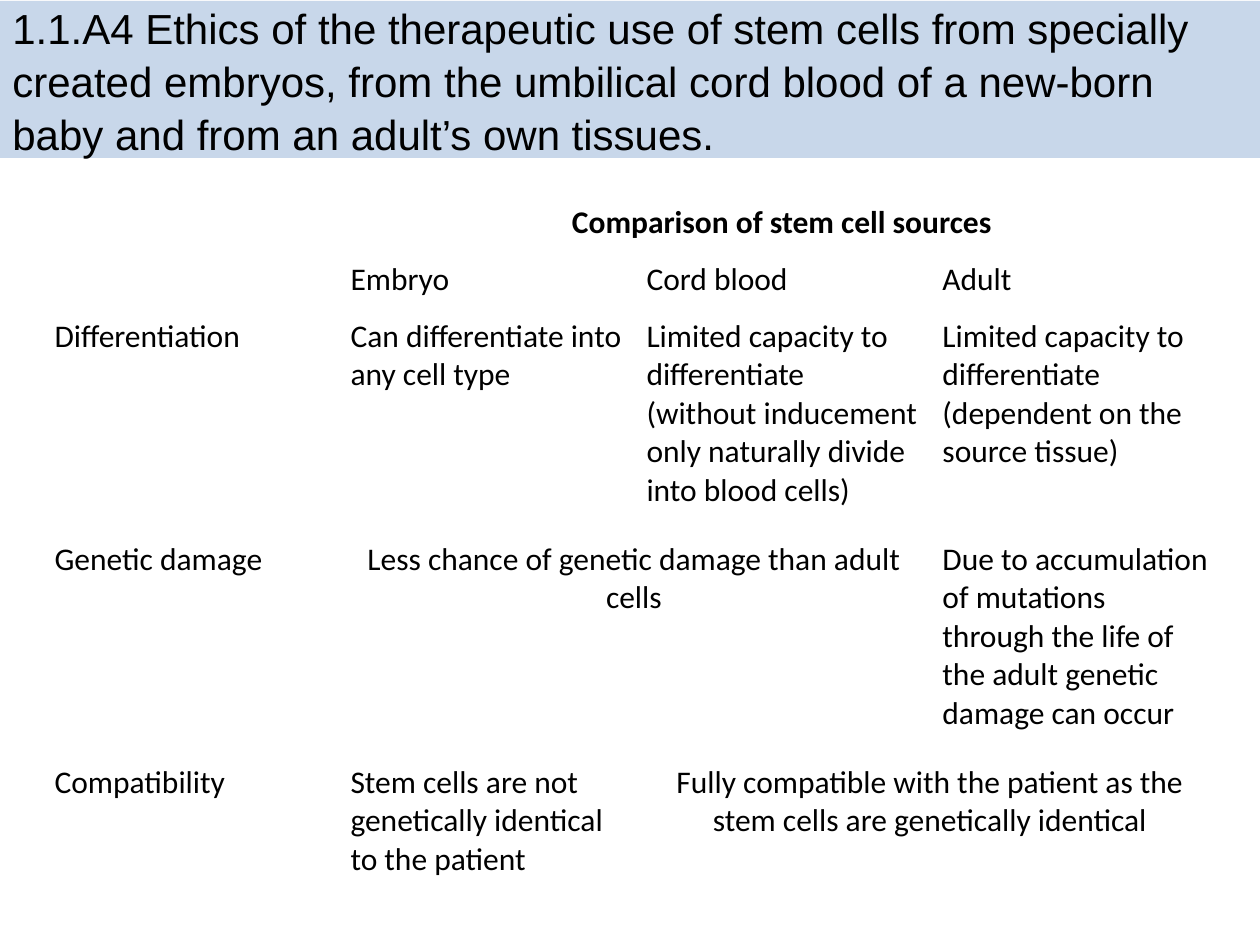
from dataclasses import dataclass

import pptx
import pptx.dml.color
import pptx.enum.shapes
import pptx.enum.text
import pptx.oxml
import pptx.oxml.ns
import pptx.util

EMU_PER_PX = 914400 / 126
COLORS = {"banner": "B9CDE5", "paper": "FFFFFF", "ink": "000000"}
COLUMN_WIDTH = 296
ROW_HEIGHTS = [57, 57, 223, 223, 140]


@dataclass
class Entry:
    row: int
    column: int
    text: str
    span: int = 1
    bold: bool = False


ENTRIES = [
    Entry(0, 1, "Comparison of stem cell sources", span=3, bold=True),
    Entry(1, 1, "Embryo"),
    Entry(1, 2, "Cord blood"),
    Entry(1, 3, "Adult"),
    Entry(2, 0, "Differentiation"),
    Entry(2, 1, "Can differentiate into any cell type"),
    Entry(2, 2, "Limited capacity to differentiate (without inducement only "
                "naturally divide into blood cells)"),
    Entry(2, 3, "Limited capacity to differentiate (dependent on the source tissue)"),
    Entry(3, 0, "Genetic damage"),
    Entry(3, 1, "Less chance of genetic damage than adult cells", span=2),
    Entry(3, 3, "Due to accumulation of mutations through the life of the adult "
                "genetic damage can occur"),
    Entry(4, 0, "Compatibility"),
    Entry(4, 1, "Stem cells are not genetically identical to the patient"),
    Entry(4, 2, "Fully compatible with the patient as the stem cells are "
                "genetically identical", span=2),
]


def px(length: int) -> pptx.util.Emu:
    return pptx.util.Emu(round(length * EMU_PER_PX))


def rgb(name: str) -> pptx.dml.color.RGBColor:
    return pptx.dml.color.RGBColor.from_string(COLORS[name])


def fill_tinted(fill, properties, color: str, opacity: int) -> None:
    fill.solid()
    fill.fore_color.rgb = rgb(color)
    tint = properties.find(pptx.oxml.ns.qn("a:solidFill"))[0]
    alpha = tint.makeelement(pptx.oxml.ns.qn("a:alpha"), {"val": str(opacity * 1000)})
    tint.append(alpha)


def write(paragraph, text: str, size: int, font: str, bold: bool = False) -> None:
    run = paragraph.add_run()
    run.text = text
    run.font.size = pptx.util.Pt(size)
    run.font.name = font
    run.font.bold = bold
    run.font.color.rgb = rgb("ink")


def outline_cell(cell) -> None:
    properties = cell._tc.get_or_add_tcPr()
    for position, side in enumerate(("lnL", "lnR", "lnT", "lnB")):
        properties.insert(position, pptx.oxml.parse_xml(
            f'<a:{side} {pptx.oxml.ns.nsdecls("a")} w="12700"><a:solidFill>'
            f'<a:srgbClr val="{COLORS["paper"]}"/></a:solidFill></a:{side}>'))


def draw_banner(slide, text: str) -> None:
    banner = slide.shapes.add_shape(
        pptx.enum.shapes.MSO_SHAPE.RECTANGLE, px(0), px(1), px(1260), px(157))
    banner.shadow.inherit = False
    fill_tinted(banner.fill, banner._element.spPr, "banner", 78)
    banner.line.fill.background()
    frame = banner.text_frame
    frame.word_wrap = True
    frame.vertical_anchor = pptx.enum.text.MSO_ANCHOR.MIDDLE
    frame.margin_top = frame.margin_bottom = 0
    heading = frame.paragraphs[0]
    heading.alignment = pptx.enum.text.PP_ALIGN.LEFT
    heading.line_spacing = 1.05
    write(heading, text, 24, "Arial")


def draw_comparison(slide, entries: list[Entry]) -> None:
    comparison = slide.shapes.add_table(
        len(ROW_HEIGHTS), 4, px(42), px(197),
        px(4 * COLUMN_WIDTH), px(sum(ROW_HEIGHTS))).table
    comparison.first_row = comparison.horz_banding = False
    for column in comparison.columns:
        column.width = px(COLUMN_WIDTH)
    for row, height in zip(comparison.rows, ROW_HEIGHTS):
        row.height = px(height)
    for cell in comparison.iter_cells():
        cell.fill.background()
        outline_cell(cell)
    for entry in entries:
        cell = comparison.cell(entry.row, entry.column)
        fill_tinted(cell.fill, cell._tc.tcPr, "paper", 60)
        paragraph = cell.text_frame.paragraphs[0]
        if entry.span > 1:
            cell.merge(comparison.cell(entry.row, entry.column + entry.span - 1))
            paragraph.alignment = pptx.enum.text.PP_ALIGN.CENTER
        write(paragraph, entry.text, 18, "Calibri", entry.bold)


def main() -> None:
    deck = pptx.Presentation()
    deck.slide_width, deck.slide_height = px(1260), px(945)
    slide = deck.slides.add_slide(deck.slide_layouts[6])
    draw_banner(slide, "1.1.A4 Ethics of the therapeutic use of stem cells from specially "
                       "created embryos, from the umbilical cord blood of a new-born baby "
                       "and from an adult’s own tissues.")
    draw_comparison(slide, ENTRIES)
    deck.save("out.pptx")


if __name__ == "__main__":
    main()
